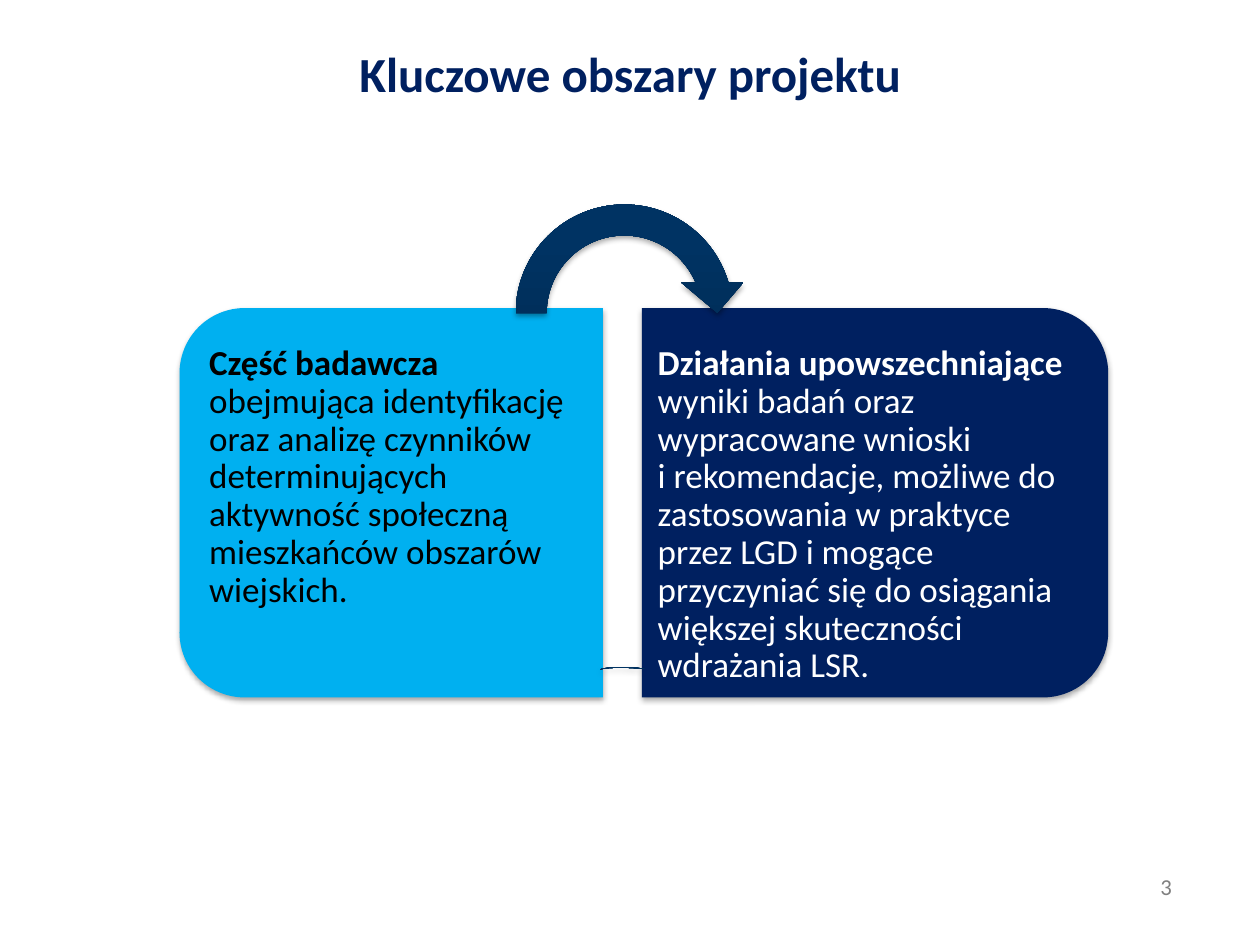
import copy

import pptx
import pptx.dml.color
import pptx.enum.shapes
import pptx.enum.text
import pptx.oxml
import pptx.oxml.ns
import pptx.util

Inches = pptx.util.Inches
Pt = pptx.util.Pt
SHAPES = pptx.enum.shapes.MSO_SHAPE
ALIGN = pptx.enum.text.PP_ALIGN

FONT = "Calibri"
COLORS = {
    "navy": "002060", "sky": "00B0F0", "black": "000000", "white": "FFFFFF",
    "gray": "808080", "arrow_dark": "00284C", "arrow_mid": "003363", "arrow_light": "003463",
}

PANELS = [
    {
        "box": (1.56, 2.31, 3.09, 3.36), "rotation": 270, "fill": "sky",
        "text_box": (1.58, 2.6, 3.21, 2.79), "insets": (0.08, 0.14, 0.12, 0.14),
        "color": "black", "lead": "Część badawcza ",
        "body": "obejmująca identyfikację oraz analizę czynników determinujących "
                "aktywność społeczną mieszkańców obszarów wiejskich.",
    },
    {
        "box": (5.4, 2.14, 3.09, 3.7), "rotation": 90, "fill": "navy",
        "text_box": (5.1, 2.6, 3.55, 2.79), "insets": (0.12, 0.14, 0.08, 0.14),
        "color": "white", "lead": "Działania upowszechniające ",
        "body": "wyniki badań oraz wypracowane wnioski \ni rekomendacje, możliwe do "
                "zastosowania w praktyce przez LGD i mogące przyczyniać się do osiągania "
                "większej skuteczności wdrażania LSR.",
    },
]
PANEL_ADJUSTMENTS = (0.167, 0)

ARROWS = [
    {"box": (3.97, 1.5, 1.97, 1.97), "turned": False},
    {"box": (4.76, 5.29, 0.38, 0.05), "turned": True},
]
ARROW_ADJUSTMENTS = (0.125, 11.423, 204.577, 108, 0.125)
ARROW_STOPS = [(0, "arrow_dark"), (0.8, "arrow_mid"), (1, "arrow_light")]

LABELS = [
    {"box": (8.86, 6.88, 0.79, 0.32), "text": "3", "size": 13, "color": "gray", "bold": False},
    {"box": (0.5, 0.3, 9, 0.93), "text": "Kluczowe obszary projektu",
     "size": 28, "color": "navy", "bold": True},
]
DEFAULT_INSETS = (0.1, 0.05, 0.1, 0.05)

SHADOW = (
    f'<a:outerShdw {pptx.oxml.ns.nsdecls("a")} blurRad="{Pt(3.1)}" dist="{Pt(1.8)}" '
    'dir="5400000" rotWithShape="0"><a:srgbClr val="000000"><a:alpha val="35000"/>'
    "</a:srgbClr></a:outerShdw>"
)


def rgb(name):
    return pptx.dml.color.RGBColor.from_string(COLORS[name])


def add_shadowed_shape(slide, kind, box, adjustments):
    shape = slide.shapes.add_shape(kind, *map(Inches, box))
    for index, value in enumerate(adjustments):
        shape.adjustments[index] = value
    shape.line.fill.background()
    shape.shadow.inherit = False
    effects = shape._element.spPr.find(pptx.oxml.ns.qn("a:effectLst"))
    effects.append(pptx.oxml.parse_xml(SHADOW))
    return shape


def fill_with_gradient(shape):
    shape.fill.gradient()
    shape.fill.gradient_angle = 90
    stop_list = shape._element.spPr.find(".//" + pptx.oxml.ns.qn("a:gsLst"))
    stop_list.append(copy.deepcopy(stop_list[-1]))
    for stop, (position, color) in zip(shape.fill.gradient_stops, ARROW_STOPS):
        stop.position = position
        stop.color.rgb = rgb(color)


def add_text(slide, box, insets, runs, size, color, paragraph_format):
    """Add a one-paragraph box; runs are (text, bold) pairs."""
    frame = slide.shapes.add_textbox(*map(Inches, box)).text_frame
    frame.word_wrap = True
    for side, inset in zip(("left", "top", "right", "bottom"), insets):
        setattr(frame, f"margin_{side}", Inches(inset))
    paragraph = frame.paragraphs[0]
    for name, value in paragraph_format.items():
        setattr(paragraph, name, value)
    for text, bold in runs:
        for index, line in enumerate(text.split("\n")):
            if index:
                paragraph.add_line_break()
            run = paragraph.add_run()
            run.text = line
            for name, value in {"name": FONT, "size": Pt(size), "bold": bold}.items():
                setattr(run.font, name, value)
            run.font.color.rgb = rgb(color)


def main():
    presentation = pptx.Presentation()
    presentation.slide_width, presentation.slide_height = Inches(10), Inches(7.5)
    slide = presentation.slides.add_slide(presentation.slide_layouts[6])

    for panel in PANELS:
        shape = add_shadowed_shape(
            slide, SHAPES.ROUND_2_SAME_RECTANGLE, panel["box"], PANEL_ADJUSTMENTS)
        shape.rotation = panel["rotation"]
        shape.fill.solid()
        shape.fill.fore_color.rgb = rgb(panel["fill"])
        add_text(slide, panel["text_box"], panel["insets"],
                 [(panel["lead"], True), (panel["body"], False)], 20, panel["color"],
                 {"alignment": ALIGN.LEFT, "line_spacing": 0.9, "space_after": Pt(7)})

    for arrow in ARROWS:
        shape = add_shadowed_shape(
            slide, SHAPES.CIRCULAR_ARROW, arrow["box"], ARROW_ADJUSTMENTS)
        fill_with_gradient(shape)
        if arrow["turned"]:
            shape.rotation = 180
            for flip in ("flipH", "flipV"):
                shape._element.spPr.xfrm.set(flip, "1")

    for label in LABELS:
        add_text(slide, label["box"], DEFAULT_INSETS, [(label["text"], label["bold"])],
                 label["size"], label["color"], {"alignment": ALIGN.CENTER})

    presentation.save("out.pptx")


if __name__ == "__main__":
    main()
